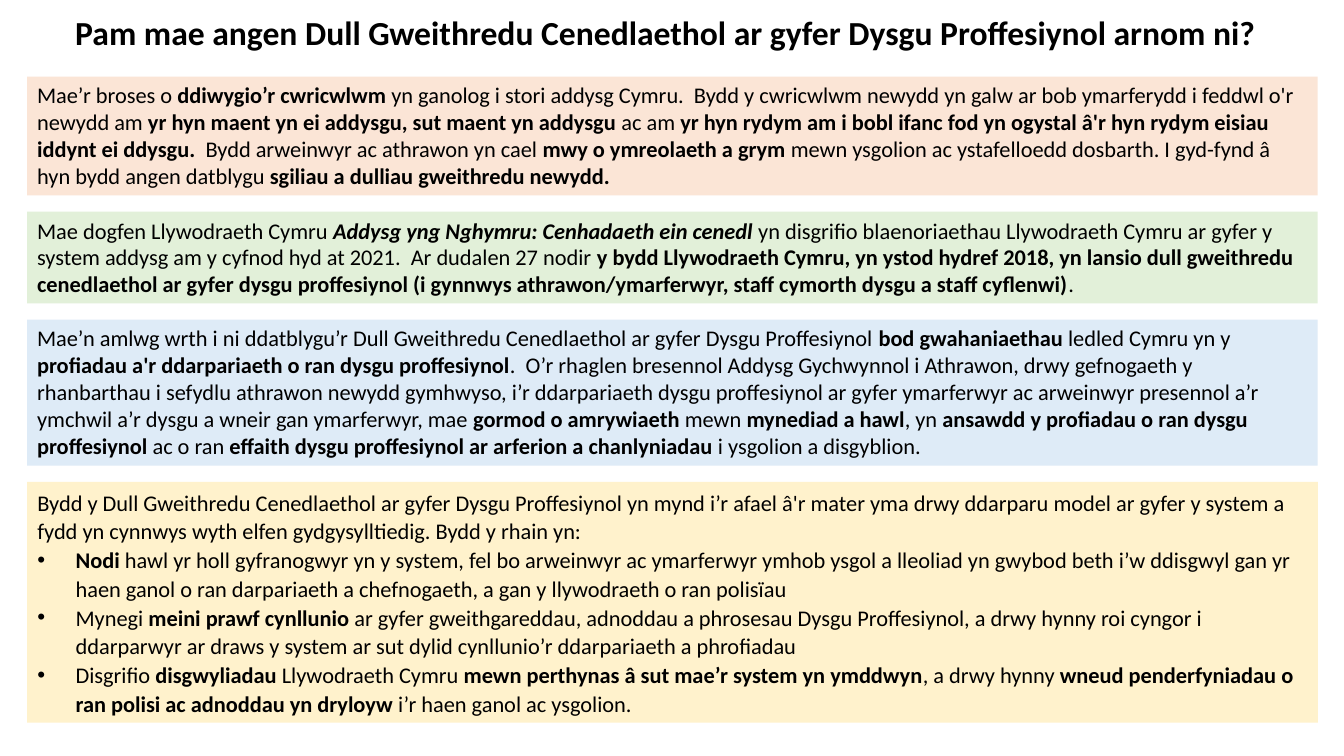
from lxml import etree
from pptx import Presentation
from pptx.dml.color import RGBColor
from pptx.enum.shapes import MSO_SHAPE
from pptx.enum.text import MSO_ANCHOR, MSO_AUTO_SIZE, PP_ALIGN
from pptx.oxml.ns import qn
from pptx.util import Inches, Pt

RECTANGLE = MSO_SHAPE.RECTANGLE
TOP, NO_FIT = MSO_ANCHOR.TOP, MSO_AUTO_SIZE.NONE
LEFT, CENTER = PP_ALIGN.LEFT, PP_ALIGN.CENTER

BLACK = RGBColor(0x00, 0x00, 0x00)
PEACH = RGBColor(0xFB, 0xE5, 0xD6)
GREEN = RGBColor(0xE2, 0xF0, 0xD9)
BLUE = RGBColor(0xDE, 0xEB, 0xF7)
YELLOW = RGBColor(0xFF, 0xF2, 0xCC)

PLAIN = {"bold": False, "italic": False}
BOLD = {"bold": True, "italic": False}
BOLD_ITALIC = {"bold": True, "italic": True}

# Content: each paragraph is a list of (text, style) spans
TITLE = [("Pam mae angen Dull Gweithredu Cenedlaethol ar gyfer Dysgu Proffesiynol arnom ni?", BOLD)]

CURRICULUM = [
    ("Mae’r broses o ", PLAIN),
    ("ddiwygio’r cwricwlwm ", BOLD),
    ("yn ganolog i stori addysg Cymru.  Bydd y cwricwlwm newydd yn galw ar bob "
     "ymarferydd i feddwl o'r newydd am ", PLAIN),
    ("yr hyn maent yn ei addysgu, sut maent yn addysgu ", BOLD),
    ("ac am ", PLAIN),
    ("yr hyn rydym am i bobl ifanc fod yn ogystal â'r hyn rydym eisiau iddynt ei ddysgu.", BOLD),
    ("  Bydd arweinwyr ac athrawon yn cael ", PLAIN),
    ("mwy o ymreolaeth a grym", BOLD),
    (" mewn ysgolion ac ystafelloedd dosbarth. I gyd-fynd â hyn bydd angen datblygu ", PLAIN),
    ("sgiliau a dulliau gweithredu newydd.", BOLD),
]

MISSION = [
    ("Mae dogfen Llywodraeth Cymru ", PLAIN),
    ("Addysg yng Nghymru: Cenhadaeth ein cenedl", BOLD_ITALIC),
    (" yn disgrifio blaenoriaethau Llywodraeth Cymru ar gyfer y system addysg am y "
     "cyfnod hyd at 2021.  Ar dudalen 27 nodir ", PLAIN),
    ("y bydd Llywodraeth Cymru, yn ystod hydref 2018, yn lansio dull gweithredu "
     "cenedlaethol ar gyfer dysgu proffesiynol (i gynnwys athrawon/ymarferwyr, staff "
     "cymorth dysgu a staff cyflenwi)", BOLD),
    (".", PLAIN),
]

VARIATION = [
    ("Mae’n amlwg wrth i ni ddatblygu’r Dull Gweithredu Cenedlaethol ar gyfer Dysgu "
     "Proffesiynol ", PLAIN),
    ("bod gwahaniaethau ", BOLD),
    ("ledled Cymru yn y ", PLAIN),
    ("profiadau a'r ddarpariaeth o ran dysgu proffesiynol", BOLD),
    (".  O’r rhaglen bresennol Addysg Gychwynnol i Athrawon, drwy gefnogaeth y "
     "rhanbarthau i sefydlu athrawon newydd gymhwyso, i’r ddarpariaeth dysgu "
     "proffesiynol ar gyfer ymarferwyr ac arweinwyr presennol a’r ymchwil a’r dysgu a "
     "wneir gan ymarferwyr, mae ", PLAIN),
    ("gormod o amrywiaeth", BOLD),
    (" mewn ", PLAIN),
    ("mynediad a hawl", BOLD),
    (", yn ", PLAIN),
    ("ansawdd y profiadau o ran dysgu proffesiynol", BOLD),
    (" ac o ran ", PLAIN),
    ("effaith dysgu proffesiynol ar arferion a chanlyniadau", BOLD),
    (" i ysgolion a disgyblion.", PLAIN),
]

MODEL_INTRO = [
    ("Bydd y Dull Gweithredu Cenedlaethol ar gyfer Dysgu Proffesiynol yn mynd i’r afael "
     "â'r mater yma drwy ddarparu model ar gyfer y system a fydd yn cynnwys wyth elfen "
     "gydgysylltiedig. Bydd y rhain yn:", PLAIN),
]
MODEL_AIMS = [
    [
        ("Nodi ", BOLD),
        ("hawl yr holl gyfranogwyr yn y system, fel bo arweinwyr ac ymarferwyr ymhob "
         "ysgol a lleoliad yn gwybod beth i’w ddisgwyl gan yr haen ganol o ran "
         "darpariaeth a chefnogaeth, a gan y llywodraeth o ran polisïau", PLAIN),
    ],
    [
        ("Mynegi ", PLAIN),
        ("meini prawf cynllunio", BOLD),
        (" ar gyfer gweithgareddau, adnoddau a phrosesau Dysgu Proffesiynol, a drwy "
         "hynny roi cyngor i ddarparwyr ar draws y system ar sut dylid cynllunio’r "
         "ddarpariaeth a phrofiadau", PLAIN),
    ],
    [
        ("Disgrifio ", PLAIN),
        ("disgwyliadau ", BOLD),
        ("Llywodraeth Cymru ", PLAIN),
        ("mewn perthynas â sut mae’r system yn ymddwyn", BOLD),
        (", a drwy hynny ", PLAIN),
        ("wneud penderfyniadau o ran polisi ac adnoddau yn dryloyw ", BOLD),
        ("i’r haen ganol ac ysgolion.", PLAIN),
    ],
]

# Panels from top to bottom: fill, height in inches, paragraphs
PANELS = [
    (PEACH, 1.18, [CURRICULUM]),
    (GREEN, 0.91, [MISSION]),
    (BLUE, 1.45, [VARIATION]),
    (YELLOW, 2.39, [MODEL_INTRO, *MODEL_AIMS]),
]
PANEL_LEFT, PANEL_TOP, PANEL_WIDTH, PANEL_GAP = 0.27, 0.76, 12.8, 0.16
BULLET_INDENT = 0.38


def place(shape, left, top, width, height):
    shape.left, shape.top = Inches(left), Inches(top)
    shape.width, shape.height = Inches(width), Inches(height)


def write(shape, paragraphs, size, alignment=LEFT, line_spacing=1.0):
    frame = shape.text_frame
    frame_format = {"word_wrap": True, "auto_size": NO_FIT, "vertical_anchor": TOP}
    for name, value in frame_format.items():
        setattr(frame, name, value)
    para_format = {"alignment": alignment, "line_spacing": line_spacing, "space_before": Pt(0)}
    for index, spans in enumerate(paragraphs):
        para = frame.add_paragraph() if index else frame.paragraphs[0]
        for name, value in para_format.items():
            setattr(para, name, value)
        for text, style in spans:
            span = para.add_run()
            span.text = text
            span.font.color.rgb = BLACK
            for name, value in {"name": "Calibri", "size": Pt(size), **style}.items():
                setattr(span.font, name, value)


def indent(para, amount):
    properties = para._p.get_or_add_pPr()
    properties.set("marL", str(Inches(amount)))
    properties.set("indent", str(-Inches(amount)))
    return properties


deck = Presentation()
deck.slide_width, deck.slide_height = Inches(13.33), Inches(7.5)
page = deck.slides.add_slide(deck.slide_layouts[1])
body = page.placeholders[1]

# Title
place(page.shapes.title, 0.26, 0.07, 12.68, 0.5)
write(page.shapes.title, [TITLE], 24, CENTER)

# Stacked panels; the one with the list is the body placeholder
panel_top = PANEL_TOP
for fill, height, paragraphs in PANELS:
    is_list = len(paragraphs) > 1
    if is_list:
        panel = body
    else:
        panel = page.shapes.add_shape(RECTANGLE, 0, 0, 0, 0)
        panel.shadow.inherit = False
    place(panel, PANEL_LEFT, panel_top, PANEL_WIDTH, height)
    panel.fill.solid()
    panel.fill.fore_color.rgb = fill
    panel.line.fill.background()
    write(panel, paragraphs, 16, line_spacing=1.07 if is_list else 1.0)
    panel_top += height + PANEL_GAP

# Plain introduction, then bulleted aims
intro, *aims = body.text_frame.paragraphs
etree.SubElement(indent(intro, 0), qn("a:buNone"))
for aim in aims:
    bullet = etree.SubElement(indent(aim, BULLET_INDENT), qn("a:buChar"))
    bullet.set("char", "•")

deck.save("out.pptx")
